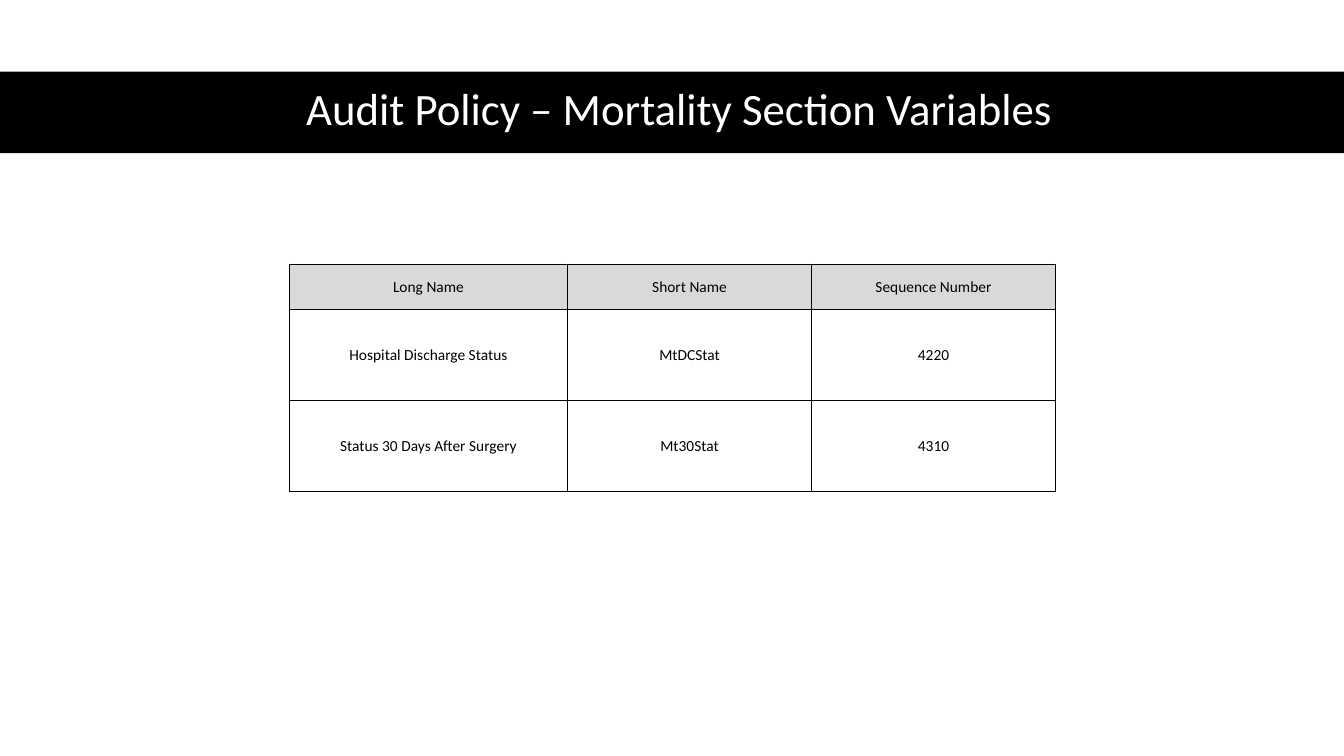
from lxml.etree import SubElement
from pptx import Presentation
from pptx.dml.color import RGBColor
from pptx.enum.shapes import MSO_SHAPE
from pptx.enum.text import MSO_ANCHOR, PP_ALIGN
from pptx.oxml.ns import qn
from pptx.util import Inches, Pt


def paint(fill, color):
    fill.solid()
    fill.fore_color.rgb = RGBColor.from_string(color)


def style(para, size, color):
    para.alignment = PP_ALIGN.CENTER
    for run in para.runs:
        run.font.name = "Calibri"
        run.font.size = Pt(size)
        paint(run.font.fill, color)


deck = Presentation()
deck.slide_width = Inches(13.33)
deck.slide_height = Inches(7.5)
slide = deck.slides.add_slide(deck.slide_layouts[6])

band = slide.shapes.add_shape(
    MSO_SHAPE.RECTANGLE, 0, Inches(0.71), deck.slide_width, Inches(0.81))
band.shadow.inherit = False
paint(band.fill, "000000")
band.line.fill.background()

title = slide.shapes.add_textbox(
    Inches(0.61), Inches(0.7), Inches(12.26), Inches(0.81))
frame = title.text_frame
frame.word_wrap = True
frame.vertical_anchor = MSO_ANCHOR.MIDDLE
frame.text = "Audit Policy – Mortality Section Variables"
frame.paragraphs[0].line_spacing = 0.9
style(frame.paragraphs[0], 32, "FFFFFF")

rows = [
    ["Long Name", "Short Name", "Sequence Number"],
    ["Hospital Discharge Status", "MtDCStat", "4220"],
    ["Status 30 Days After Surgery", "Mt30Stat", "4310"],
]
table = slide.shapes.add_table(
    3, 3, Inches(2.87), Inches(2.62), Inches(7.6), Inches(2.25)).table
table.horz_banding = False
for column, width in zip(table.columns, [2.76, 2.42, 2.42]):
    column.width = Inches(width)
for row, height in zip(table.rows, [0.45, 0.9, 0.9]):
    row.height = Inches(height)

for r, row in enumerate(rows):
    for c, text in enumerate(row):
        cell = table.cell(r, c)
        cell.text_frame.text = text
        style(cell.text_frame.paragraphs[0], 11, "000000")
        cell.text_frame.paragraphs[0].runs[0].font.bold = False
        cell.vertical_anchor = MSO_ANCHOR.MIDDLE
        cell.margin_left = cell.margin_right = cell.margin_top = Inches(0.01)
        cell.margin_bottom = 0
        props = cell._tc.get_or_add_tcPr()
        for side in ["lnL", "lnR", "lnT", "lnB"]:
            line = SubElement(props, qn(f"a:{side}"), w=str(Pt(0.5)))
            solid = SubElement(line, qn("a:solidFill"))
            SubElement(solid, qn("a:srgbClr"), val="000000")
        if r == 0:
            paint(cell.fill, "D9D9D9")
        else:
            cell.fill.background()

deck.save("out.pptx")
